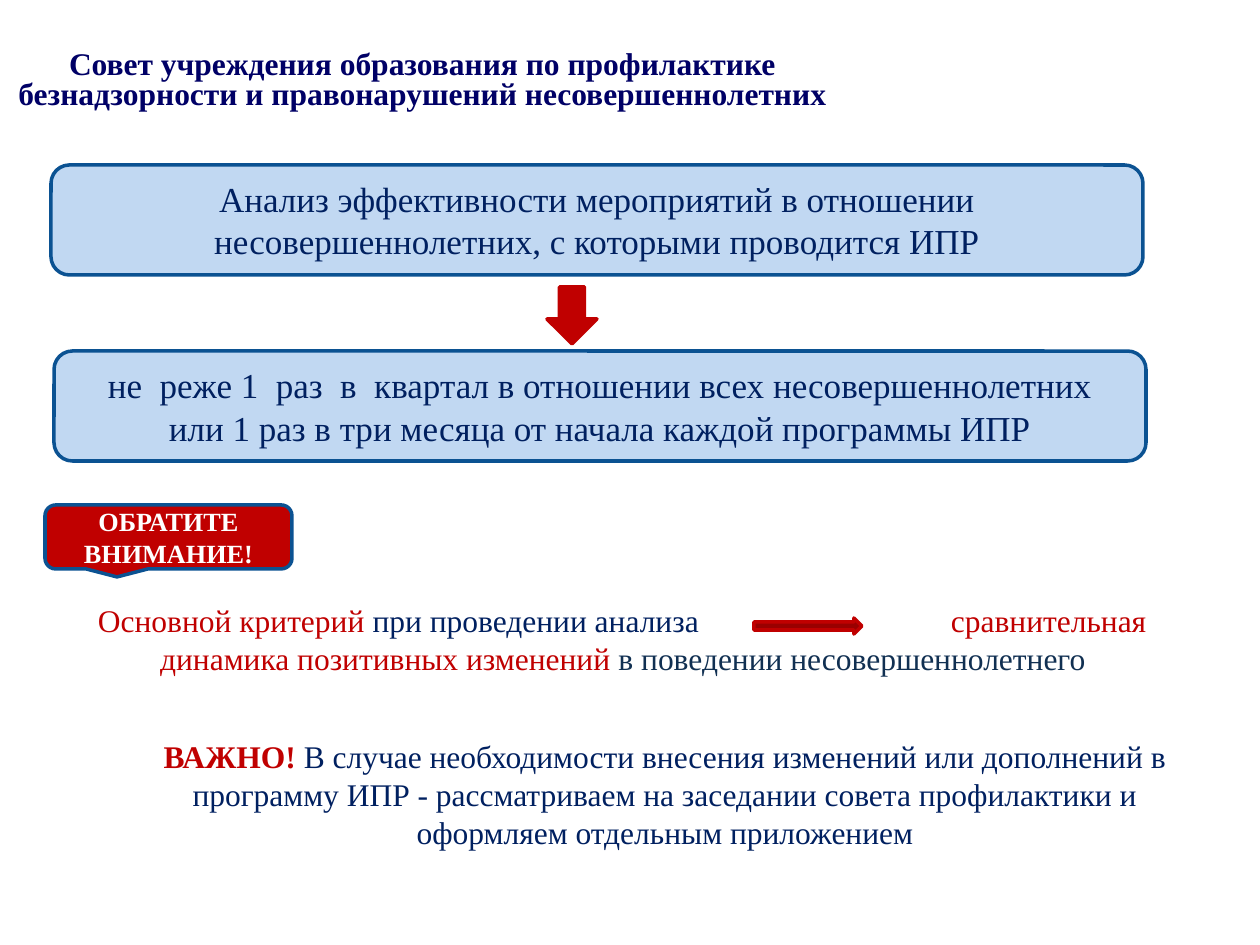
from dataclasses import dataclass
from typing import Optional

from pptx import Presentation
from pptx.dml.color import RGBColor
from pptx.enum.shapes import MSO_SHAPE
from pptx.enum.text import MSO_ANCHOR, PP_ALIGN
from pptx.oxml.ns import qn
from pptx.util import Emu, Pt
from lxml.etree import SubElement

PIXEL = 914400 // 126
FONT = "Times New Roman"
COLORS = {
    "title": "000066",
    "navy": "002060",
    "slate": "113052",
    "red": "C00000",
    "dark_red": "990000",
    "pale_blue": "C1D8F2",
    "blue": "0B5292",
    "white": "FFFFFF",
}


@dataclass(frozen=True)
class Run:
    text: str
    color: str
    bold: bool = False


@dataclass(frozen=True)
class Line:
    runs: tuple[Run, ...]
    align: PP_ALIGN = PP_ALIGN.CENTER
    tab: Optional[int] = None


@dataclass(frozen=True)
class Box:
    left: int
    top: int
    width: int
    height: int
    lines: tuple[Line, ...] = ()
    size: int = 18
    spacing: Optional[float] = None
    anchor: MSO_ANCHOR = MSO_ANCHOR.TOP
    side_margin: int = 13


@dataclass(frozen=True)
class Figure:
    kind: MSO_SHAPE
    box: Box
    fill: str
    outline: str


def px(value: int) -> Emu:
    return Emu(value * PIXEL)


def color(name: str) -> RGBColor:
    return RGBColor.from_string(COLORS[name])


def place(box: Box) -> tuple[Emu, ...]:
    return px(box.left), px(box.top), px(box.width), px(box.height)


def write(shape, box: Box) -> None:
    frame = shape.text_frame
    frame.word_wrap = True
    frame.vertical_anchor = box.anchor
    frame.margin_left = frame.margin_right = px(box.side_margin)
    for index, line in enumerate(box.lines):
        paragraph = frame.add_paragraph() if index else frame.paragraphs[0]
        paragraph.alignment = line.align
        if box.spacing:
            paragraph.line_spacing = box.spacing
        if line.tab:
            tabs = SubElement(paragraph._p.get_or_add_pPr(), qn("a:tabLst"))
            SubElement(tabs, qn("a:tab"), pos=str(px(line.tab)), algn="l")
        for item in line.runs:
            run = paragraph.add_run()
            run.text = item.text
            run.font.name = FONT
            run.font.size = Pt(box.size)
            run.font.bold = item.bold
            run.font.color.rgb = color(item.color)


def draw_text(slide, box: Box) -> None:
    write(slide.shapes.add_textbox(*place(box)), box)


def draw_figure(slide, figure: Figure) -> None:
    shape = slide.shapes.add_shape(figure.kind, *place(figure.box))
    shape.shadow.inherit = False
    shape.fill.solid()
    shape.fill.fore_color.rgb = color(figure.fill)
    shape.line.color.rgb = color(figure.outline)
    shape.line.width = Pt(2)
    if figure.box.lines:
        write(shape, figure.box)


def plain_lines(name: str, *texts: str, bold: bool = False) -> tuple[Line, ...]:
    return tuple(Line((Run(text, name, bold),)) for text in texts)


def panel(left: int, top: int, *texts: str) -> Figure:
    box = Box(left, top, 1092, 110, plain_lines("navy", *texts),
              size=20, anchor=MSO_ANCHOR.MIDDLE)
    return Figure(MSO_SHAPE.ROUNDED_RECTANGLE, box, "pale_blue", "blue")


TITLE = Box(
    0, 43, 845, 77,
    plain_lines("title", "Совет учреждения образования по профилактике",
                "безнадзорности и правонарушений несовершеннолетних", bold=True),
    spacing=0.8, anchor=MSO_ANCHOR.MIDDLE)

# The tab leaves room for the arrow between the two halves of the line
CRITERION = Box(
    43, 595, 1160, 89,
    (Line((Run("Основной критерий ", "red"),
           Run("при проведении анализа", "navy"),
           Run("\tсравнительная", "red")), PP_ALIGN.LEFT, tab=853),
     Line((Run("динамика позитивных изменений ", "red"),
           Run("в поведении несовершеннолетнего", "slate")))),
    side_margin=55)

IMPORTANT = Box(
    144, 731, 1042, 127,
    (Line((Run("ВАЖНО! ", "red", True),
           Run("В случае необходимости внесения изменений или дополнений в "
               "программу ИПР - рассматриваем на заседании совета профилактики "
               "и оформляем отдельным приложением", "navy"))),))

CALLOUT = Box(
    45, 505, 247, 64,
    plain_lines("white", "ОБРАТИТЕ", "ВНИМАНИЕ!", bold=True),
    size=15, anchor=MSO_ANCHOR.MIDDLE)

FIGURES = (
    Figure(MSO_SHAPE.RIGHT_ARROW, Box(754, 618, 108, 16), "dark_red", "red"),
    Figure(MSO_SHAPE.ROUNDED_RECTANGULAR_CALLOUT, CALLOUT, "red", "blue"),
    Figure(MSO_SHAPE.DOWN_ARROW, Box(547, 287, 50, 57), "red", "red"),
    panel(51, 165, "Анализ эффективности мероприятий в отношении "
                   "несовершеннолетних, с которыми проводится ИПР"),
    panel(54, 351, "не  реже 1  раз  в  квартал в отношении всех несовершеннолетних",
          "или 1 раз в три месяца от начала каждой программы ИПР"),
)


def main() -> None:
    presentation = Presentation()
    presentation.slide_width = px(1260)
    presentation.slide_height = px(945)
    slide = presentation.slides.add_slide(presentation.slide_layouts[6])

    # Heading and body text
    for box in (TITLE, CRITERION, IMPORTANT):
        draw_text(slide, box)

    # Panels, arrows and callout
    for figure in FIGURES:
        draw_figure(slide, figure)

    presentation.save("out.pptx")


if __name__ == "__main__":
    main()
